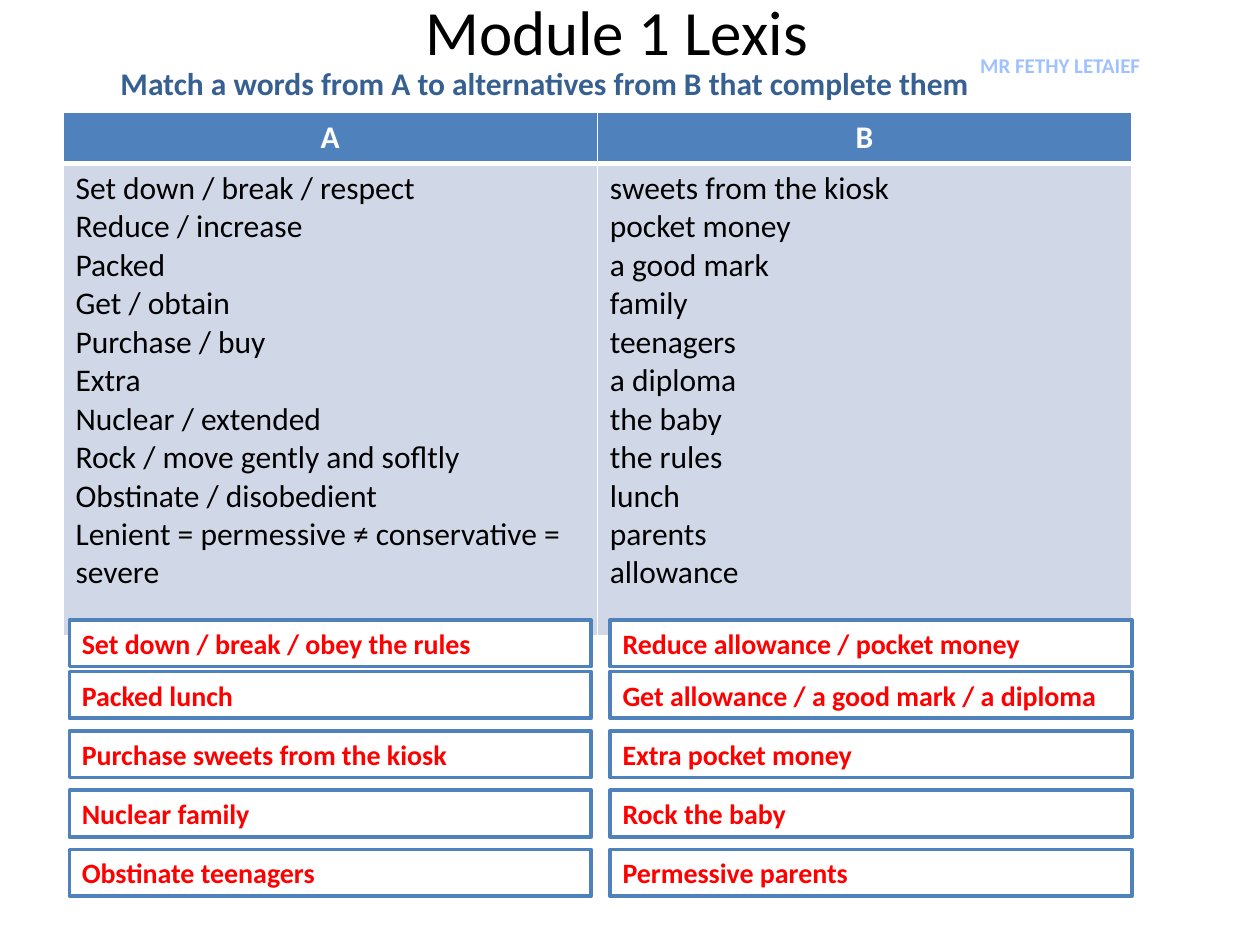
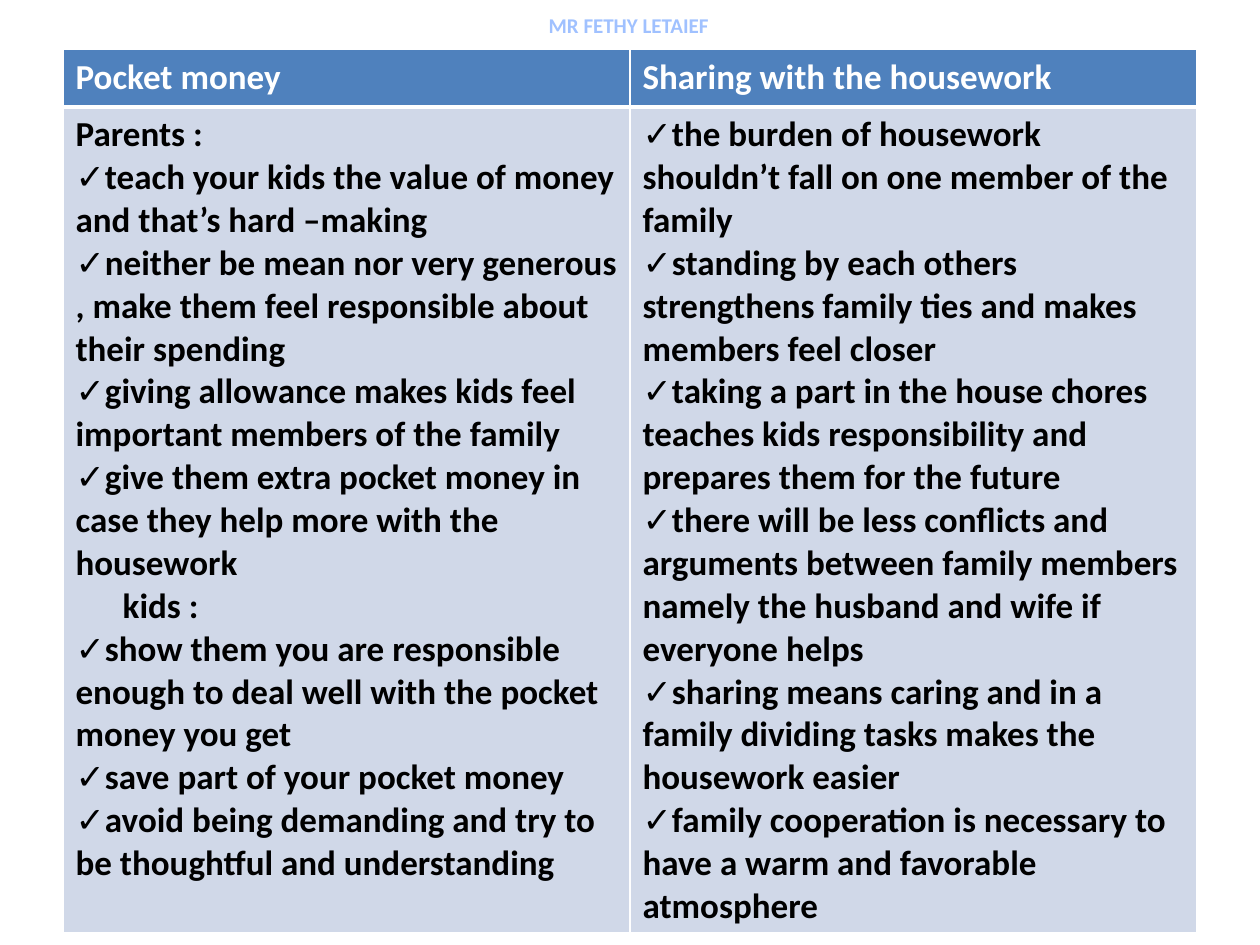
import pptx
import pptx.util
import pptx.dml.color
import pptx.enum.shapes
import pptx.enum.text
import pptx.oxml
import pptx.oxml.ns
from dataclasses import dataclass
from lxml import etree

Cm = pptx.util.Cm
Pt = pptx.util.Pt
Align = pptx.enum.text.PP_ALIGN
Anchor = pptx.enum.text.MSO_ANCHOR


@dataclass(frozen=True)
class Theme:
    font: str = "Calibri"
    black: str = "000000"
    white: str = "FFFFFF"
    blue: str = "4F81BD"
    dark_blue: str = "376092"
    pale_blue: str = "D0D8E8"
    credit_blue: str = "A0C1FF"
    red: str = "FF0000"
    title_size: int = 36
    large_size: int = 20
    body_size: int = 18
    answer_size: int = 16
    credit_size: int = 12


theme = Theme()
rgb = pptx.dml.color.RGBColor.from_string
qn = pptx.oxml.ns.qn


def write_text(frame, text, size, color=theme.black, bold=False,
               align=Align.LEFT, anchor=Anchor.TOP):
    """Write one paragraph per line; a leading ✓ is a bullet, a leading tab an indent."""
    frame.word_wrap = True
    frame.vertical_anchor = anchor
    for index, line in enumerate(text.split("\n")):
        para = frame.add_paragraph() if index else frame.paragraphs[0]
        para.alignment = align
        span = para.add_run()
        span.text = line.lstrip("✓\t")
        span.font.name = theme.font
        span.font.size = Pt(size)
        span.font.bold = bold
        span.font.color.rgb = rgb(color)
        if line[0] in "✓\t":
            properties = para._p.get_or_add_pPr()
            properties.set("marL", str(Cm(0.95) if line[0] == "\t" else 0))
            properties.set("indent", "0")
            if line[0] == "✓":
                etree.SubElement(properties, qn("a:buFont"), typeface=theme.font)
                etree.SubElement(properties, qn("a:buChar"), char="✓")


def add_word_table(page, top, width, heights, rows, size, header_align, body_bold):
    """Add a two-column table with a blue header row and one pale body row."""
    frame = page.shapes.add_table(2, 2, Cm(1.27), Cm(top), Cm(width), Cm(sum(heights)))
    table = frame.table
    table.horz_banding = False
    for column in table.columns:
        column.width = Cm(width / 2)
    for row_index, texts in enumerate(rows):
        table.rows[row_index].height = Cm(heights[row_index])
        header = row_index == 0
        for column_index, text in enumerate(texts):
            cell = table.cell(row_index, column_index)
            cell.fill.solid()
            cell.fill.fore_color.rgb = rgb(theme.blue if header else theme.pale_blue)
            write_text(cell.text_frame, text, size,
                       color=theme.white if header else theme.black,
                       bold=header or body_bold,
                       align=header_align if header else Align.LEFT)
            # White rules, thicker between header and body
            widths = {"lnL": 1, "lnR": 1, "lnT": 1 if header else 3, "lnB": 3 if header else 1}
            for place, (side, points) in enumerate(widths.items()):
                rule = etree.Element(qn("a:" + side), w=str(Pt(points)))
                fill = etree.SubElement(rule, qn("a:solidFill"))
                etree.SubElement(fill, qn("a:srgbClr"), val=theme.white)
                cell._tc.get_or_add_tcPr().insert(place, rule)


deck = pptx.Presentation()
deck.slide_width = Cm(25.4)
deck.slide_height = Cm(19.05)

# Slide 1: title and instruction
lexis_page = deck.slides.add_slide(deck.slide_layouts[5])
title = lexis_page.shapes.title
title.left, title.top, title.width, title.height = Cm(1), Cm(-0.2), Cm(22.86), Cm(1.63)
write_text(title.text_frame, "Module 1 Lexis", theme.title_size,
           align=Align.CENTER, anchor=Anchor.MIDDLE)

instruction = lexis_page.shapes.add_textbox(Cm(2.18), Cm(1.17), Cm(19.46), Cm(1.02))
write_text(instruction.text_frame,
           "Match a words from A to alternatives from B that complete them",
           theme.body_size, color=theme.dark_blue, bold=True)

# Slide 1: words to match
words_a = """Set down / break / respect
Reduce / increase
Packed
Get / obtain
Purchase / buy
Extra
Nuclear / extended
Rock / move gently and sofltly
Obstinate / disobedient
Lenient = permessive ≠ conservative = severe"""
words_b = """sweets from the kiosk
pocket money
a good mark
family
teenagers
a diploma
the baby
the rules
lunch
parents
allowance"""
add_word_table(lexis_page, 2.27, 21.54, (1.02, 9.53), [("A", "B"), (words_a, words_b)],
               theme.body_size, Align.CENTER, False)

# Slide 1: answer boxes
answers = [
    ("Set down / break / obey the rules", "Reduce allowance / pocket money"),
    ("Packed lunch", "Get allowance / a good mark / a diploma"),
    ("Purchase sweets from the kiosk", "Extra pocket money"),
    ("Nuclear family", "Rock the baby"),
    ("Obstinate teenagers", "Permessive parents"),
]
for row_index, pair in enumerate(answers):
    top = 13.54 + 1.195 * (row_index - 1) if row_index else 12.5
    for column_index, answer in enumerate(pair):
        box = lexis_page.shapes.add_shape(
            pptx.enum.shapes.MSO_SHAPE.RECTANGLE,
            Cm(1.4 + 10.9 * column_index), Cm(top), Cm(10.52), Cm(0.94))
        box.shadow.inherit = False
        box.fill.solid()
        box.fill.fore_color.rgb = rgb(theme.white)
        box.line.color.rgb = rgb(theme.blue)
        box.line.width = Pt(2)
        write_text(box.text_frame, answer, theme.answer_size, color=theme.red,
                   bold=True, anchor=Anchor.MIDDLE)

# Slide 2: ideas on pocket money and housework
ideas_page = deck.slides.add_slide(deck.slide_layouts[6])
pocket_money = """Parents :
✓teach your kids the value of money and that’s hard –making
✓neither be mean nor very generous , make them feel responsible about their spending
✓giving allowance makes kids feel important members of the family
✓give them extra pocket money in case they help more with the housework
\tkids :
✓show them you are responsible enough to deal well with the pocket money you get
✓save part of your pocket money
✓avoid being demanding and try to be thoughtful and understanding"""
housework = """✓the burden of housework shouldn’t fall on one member of the family
✓standing by each others strengthens family ties and makes members feel closer
✓taking a part in the house chores teaches kids responsibility and prepares them for the future
✓there will be less conflicts and arguments between family members namely the husband and wife if everyone helps
✓sharing means caring and in a family dividing tasks makes the housework easier
✓family cooperation is necessary to have a warm and favorable atmosphere"""
add_word_table(ideas_page, 1, 22.86, (1.16, 16.65),
               [("Pocket money", "Sharing with the housework"), (pocket_money, housework)],
               theme.large_size, Align.LEFT, True)

# Teacher's name on both slides
for page, left, top in ((lexis_page, 17.35, 0.8), (ideas_page, 8.65, 0)):
    credit = page.shapes.add_textbox(Cm(left), Cm(top), Cm(8.05), Cm(1.02))
    write_text(credit.text_frame, "MR FETHY LETAIEF", theme.credit_size,
               color=theme.credit_blue, bold=True, align=Align.CENTER, anchor=Anchor.MIDDLE)

deck.save("out.pptx")
